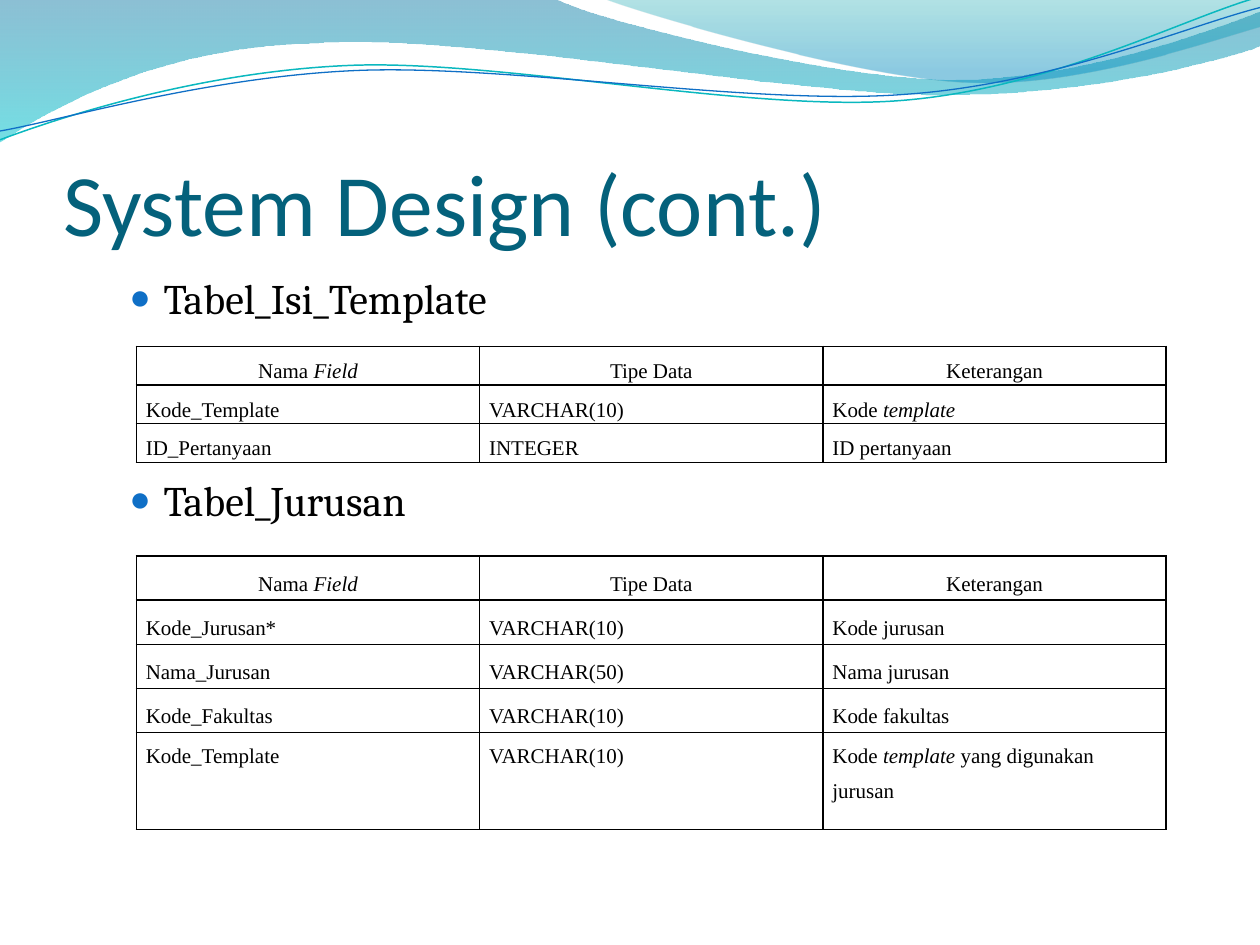
"""Build the "System Design (cont.)" slide with its wave header and two field tables."""
from lxml.etree import SubElement
from pptx import Presentation
from pptx.dml.color import RGBColor
from pptx.enum.text import MSO_ANCHOR, MSO_AUTO_SIZE, PP_ALIGN
from pptx.oxml.ns import qn
from pptx.util import Cm, Pt


def apply(target, values):
    """Set each named attribute on the target."""
    for name, value in values.items():
        setattr(target, name, value)


def colour(code):
    """Turn a hex string into a colour."""
    return RGBColor.from_string(code)


deck = Presentation()
apply(deck, {"slide_width": Cm(25.4), "slide_height": Cm(19.05)})
slide = deck.slides.add_slide(deck.slide_layouts[5])

waves = [
    {"start": (0, 0),
     "parts": [[(4.4, -0.01)],
               [(4.76, 0.17), (6.64, 0.63), (7.58, 0.63)],
               [(8.53, 0.63), (9.58, 0.26), (10, 0.09)],
               [(10.01, 0.36)],
               [(9.83, 0.44), (8.7, 0.76), (7.46, 0.75)],
               [(6.22, 0.75), (3.82, 0.28), (2.57, 0.34)],
               [(1.29, 0.36), (0.46, 0.83), (-0.01, 1.13)],
               [(0, 0)]],
     "gradient": [(0, "0074A1", 45), (1, "00C6CF", 55)]},
    {"start": (4.79, -0.01),
     "parts": [[(5.09, 0.11), (6.82, 0.62), (7.69, 0.65)],
               [(8.56, 0.69), (9.61, 0.32), (10, 0.21)],
               [(10, 0)],
               [(4.79, -0.01)]],
     "gradient": [(0, "00A1A9", 30), (0.8, "008BBF", 45)]},
    {"start": (0, 1.11),
     "parts": [[(0.48, 0.93), (1.58, 0.57), (2.77, 0.52)],
               [(3.95, 0.47), (5.93, 0.89), (7.13, 0.8)],
               [(8.33, 0.71), (9.38, 0.15), (9.98, -0.02)]],
     "line": ("0AB8BF", 0.85)},
    {"start": (0, 1.04),
     "parts": [[(0.47, 0.96), (1.64, 0.61), (2.83, 0.56)],
               [(4.03, 0.51), (5.97, 0.84), (7.17, 0.75)],
               [(8.36, 0.67), (9.41, 0.21), (10, 0.06)]],
     "line": ("0F6FC6", 0.75)},
]
for wave in waves:
    outline = [wave["start"], *sum(wave["parts"], [])]
    points = [(Cm(2.54 * x), Cm(2.54 * y)) for x, y in outline]
    builder = slide.shapes.build_freeform(*points[0])
    builder.add_line_segments(points[1:], close="gradient" in wave)
    ribbon = builder.convert_to_shape()
    segments = iter(list(ribbon.element.spPr.iter(qn("a:lnTo"))))
    for part in wave["parts"]:
        curve = next(segments)
        for _ in part[1:]:
            control = next(segments)
            curve.append(control[0])
            control.getparent().remove(control)
        if len(part) == 3:
            curve.tag = qn("a:cubicBezTo")
    ribbon.shadow.inherit = False
    if "line" in wave:
        ribbon.fill.background()
        code, width = wave["line"]
        ribbon.line.color.rgb = colour(code)
        ribbon.line.width = Pt(width)
        continue
    ribbon.line.fill.background()
    ribbon.fill.gradient()
    ribbon.fill.gradient_angle = 270
    for stop, (position, code, opacity) in zip(ribbon.fill.gradient_stops, wave["gradient"]):
        stop.position = position
        stop.color.rgb = colour(code)
    tints = ribbon.element.spPr.iter(qn("a:srgbClr"))
    for tint, (position, code, opacity) in zip(tints, wave["gradient"]):
        SubElement(tint, qn("a:alpha"), val=str(opacity * 1000))

title = slide.shapes.title
apply(title, {"left": Cm(1.27), "top": Cm(1.94), "width": Cm(22.86), "height": Cm(3.18)})
apply(title.text_frame, {
    "text": "System Design (cont.)", "vertical_anchor": MSO_ANCHOR.BOTTOM,
    "auto_size": MSO_AUTO_SIZE.NONE, "word_wrap": True, "margin_left": 0,
    "margin_right": 0, "margin_top": Cm(0.13), "margin_bottom": 0})
heading = title.text_frame.paragraphs[0]
heading.alignment = PP_ALIGN.LEFT
apply(heading.runs[0].font, {"name": "Calibri", "size": Pt(50)})
heading.runs[0].font.color.rgb = colour("04617B")

table_names = slide.shapes.add_textbox(Cm(1.27), Cm(5.36), Cm(22.86), Cm(12.19)).text_frame
table_names.word_wrap = True
table_names.text = "Tabel_Isi_Template\nTabel_Jurusan"
for paragraph, gap in zip(table_names.paragraphs, (0, 87)):
    paragraph.space_before = Pt(gap)
    apply(paragraph.runs[0].font, {"name": "Cambria", "size": Pt(24)})
    paragraph.runs[0].font.color.rgb = colour("000000")
    properties = paragraph._p.get_or_add_pPr()
    properties.set("marL", str(Cm(1.78)))
    properties.set("indent", str(Cm(-0.69)))
    bullet_colour = SubElement(properties, qn("a:buClr"))
    SubElement(bullet_colour, qn("a:srgbClr"), val="0F6FC6")
    SubElement(properties, qn("a:buSzPct"), val="85000")
    SubElement(properties, qn("a:buFont"), typeface="Times New Roman")
    SubElement(properties, qn("a:buChar"), char="●")

header = ["Nama /Field/", "Tipe Data", "Keterangan"]
field_tables = [
    (6.98, [0.78] * 3, [
        header,
        ["Kode_Template", "VARCHAR(10)", "Kode /template/"],
        ["ID_Pertanyaan", "INTEGER", "ID pertanyaan"]]),
    (11.21, [0.89] * 4 + [1.95], [
        header,
        ["Kode_Jurusan*", "VARCHAR(10)", "Kode jurusan"],
        ["Nama_Jurusan", "VARCHAR(50)", "Nama jurusan"],
        ["Kode_Fakultas", "VARCHAR(10)", "Kode fakultas"],
        ["Kode_Template", "VARCHAR(10)", "Kode /template/ yang digunakan jurusan"]]),
]
for top, heights, records in field_tables:
    table = slide.shapes.add_table(len(records), len(header), Cm(2.75), Cm(top),
                                   Cm(20.76), Cm(sum(heights))).table
    apply(table, {"first_row": False, "horz_banding": False})
    for column in table.columns:
        column.width = Cm(6.92)
    for row, height, record in zip(table.rows, heights, records):
        row.height = Cm(height)
        for cell, wording in zip(row.cells, record):
            tall = height > 1
            apply(cell, {
                "margin_left": Cm(0.19), "margin_right": Cm(0.19),
                "margin_top": 0, "margin_bottom": 0,
                "vertical_anchor": MSO_ANCHOR.TOP if tall else MSO_ANCHOR.MIDDLE})
            paragraph = cell.text_frame.paragraphs[0]
            apply(paragraph, {
                "line_spacing": 1.5,
                "alignment": PP_ALIGN.CENTER if record is header else PP_ALIGN.LEFT})
            for index, piece in enumerate(wording.split("/")):
                if piece:
                    run = paragraph.add_run()
                    run.text = piece
                    apply(run.font, {"name": "Times New Roman", "size": Pt(12),
                                     "italic": index % 2 == 1})
                    run.font.color.rgb = colour("000000")
            borders = cell._tc.get_or_add_tcPr()
            for side in ("lnL", "lnR", "lnT", "lnB"):
                edge = SubElement(borders, qn(f"a:{side}"), w=str(Pt(1)))
                ink = SubElement(edge, qn("a:solidFill"))
                SubElement(ink, qn("a:srgbClr"), val="000000")
            cell.fill.background()

deck.save("out.pptx")
